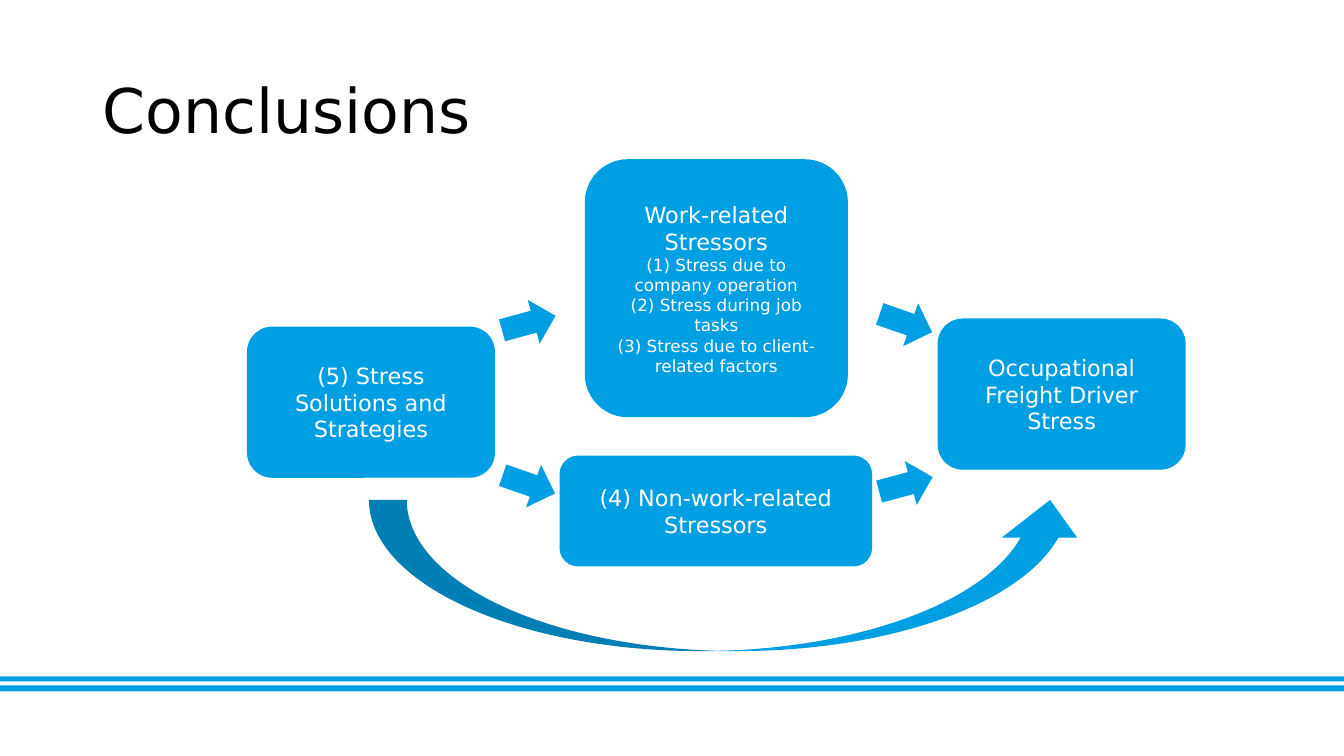
"""Builds the Conclusions slide: a flow diagram of freight driver stress."""
from dataclasses import dataclass

from pptx import Presentation
from pptx.dml.color import RGBColor
from pptx.enum import shapes, text
from pptx.util import Inches, Pt

Shape = shapes.MSO_SHAPE


@dataclass(frozen=True)
class Theme:
    """Colours, font and type sizes of the slide."""
    blue: RGBColor = RGBColor.from_string("009FE3")
    white: RGBColor = RGBColor.from_string("FFFFFF")
    black: RGBColor = RGBColor.from_string("000000")
    font: str = "DejaVu Sans"
    title: int = 44
    heading: int = 16
    detail: int = 12


@dataclass(frozen=True)
class Box:
    """A rectangle in inches."""
    left: float
    top: float
    width: float
    height: float


@dataclass(frozen=True)
class Topic:
    """A rounded box with a heading and optional details."""
    box: Box
    heading: str
    details: tuple[str, ...] = ()


THEME = Theme()
SLIDE_WIDTH, SLIDE_HEIGHT = 13.33, 7.5
TITLE_BOX = Box(0.92, 0.4, 11.5, 1.45)
FOOTER_RULES = (Box(0, 6.8, SLIDE_WIDTH, 0.06), Box(0, 6.71, SLIDE_WIDTH, 0.05))
TOPICS = (
    Topic(Box(5.8, 1.58, 2.61, 2.56), "Work-related Stressors", (
        "(1) Stress due to company operation",
        "(2) Stress during job tasks",
        "(3) Stress due to client-related factors",
    )),
    Topic(Box(5.55, 4.52, 3.1, 1.1), "(4) Non-work-related Stressors"),
    Topic(Box(2.45, 3.24, 2.46, 1.5), "(5) Stress Solutions and Strategies"),
    Topic(Box(9.3, 3.16, 2.46, 1.5), "Occupational Freight Driver Stress"),
)
ARROW_LEFTS, ARROW_TOPS = (4.97, 8.71), (2.98, 4.58)
ARROW_WIDTH, ARROW_HEIGHT = 0.55, 0.45
RISING, FALLING = -15.2, 19.2
FEEDBACK_BOX = Box(3.66, 4.96, 7.13, 1.5)


def place(box: Box) -> tuple:
    """Return the box as four lengths."""
    return tuple(Inches(n) for n in (box.left, box.top, box.width, box.height))


def add_blue_shape(slide, kind, box: Box, rotation: float = 0, adjustments: tuple = ()):
    """Add a flat blue preset shape without outline or shadow."""
    shape = slide.shapes.add_shape(kind, *place(box))
    shape.fill.solid()
    shape.fill.fore_color.rgb = THEME.blue
    shape.line.fill.background()
    shape.shadow.inherit = False
    shape.rotation = rotation
    for index, value in enumerate(adjustments):
        shape.adjustments[index] = value
    return shape


def write(paragraph, words: str, *, size: int, color: RGBColor,
          align=text.PP_ALIGN.LEFT, line_spacing: float = 1.0) -> None:
    """Write formatted words into a paragraph."""
    paragraph.alignment = align
    paragraph.line_spacing = line_spacing
    run = paragraph.add_run()
    run.text = words
    run.font.name = THEME.font
    run.font.size = Pt(size)
    run.font.color.rgb = color


def add_title(slide, words: str) -> None:
    """Add the slide title."""
    frame = slide.shapes.add_textbox(*place(TITLE_BOX)).text_frame
    frame.word_wrap = True
    frame.vertical_anchor = text.MSO_ANCHOR.MIDDLE
    write(frame.paragraphs[0], words, size=THEME.title, color=THEME.black, line_spacing=0.9)


def add_topic(slide, topic: Topic) -> None:
    """Add a rounded box with its centred text."""
    frame = add_blue_shape(slide, Shape.ROUNDED_RECTANGLE, topic.box, adjustments=(0.167,)).text_frame
    frame.word_wrap = True
    frame.vertical_anchor = text.MSO_ANCHOR.MIDDLE
    frame.margin_left = frame.margin_right = Inches(0.1)
    frame.margin_top = frame.margin_bottom = Inches(0.1)
    center = text.PP_ALIGN.CENTER
    write(frame.paragraphs[0], topic.heading, size=THEME.heading, color=THEME.white, align=center)
    for detail in topic.details:
        write(frame.add_paragraph(), detail, size=THEME.detail, color=THEME.white, align=center)


def add_arrows(slide) -> None:
    """Add the four tilted arrows and the curved arrow below them."""
    for column, left in enumerate(ARROW_LEFTS):
        for row, top in enumerate(ARROW_TOPS):
            box = Box(left, top, ARROW_WIDTH, ARROW_HEIGHT)
            add_blue_shape(slide, Shape.RIGHT_ARROW, box, RISING if row == column else FALLING)
    add_blue_shape(slide, Shape.CURVED_UP_ARROW, FEEDBACK_BOX, adjustments=(0.25, 0.5, 0.25))


def main() -> None:
    """Build and save the presentation."""
    presentation = Presentation()
    presentation.slide_width = Inches(SLIDE_WIDTH)
    presentation.slide_height = Inches(SLIDE_HEIGHT)
    slide = presentation.slides.add_slide(presentation.slide_layouts[6])
    for rule in FOOTER_RULES:
        add_blue_shape(slide, Shape.RECTANGLE, rule)
    add_title(slide, "Conclusions")
    for topic in TOPICS:
        add_topic(slide, topic)
    add_arrows(slide)
    presentation.save("out.pptx")


if __name__ == "__main__":
    main()
